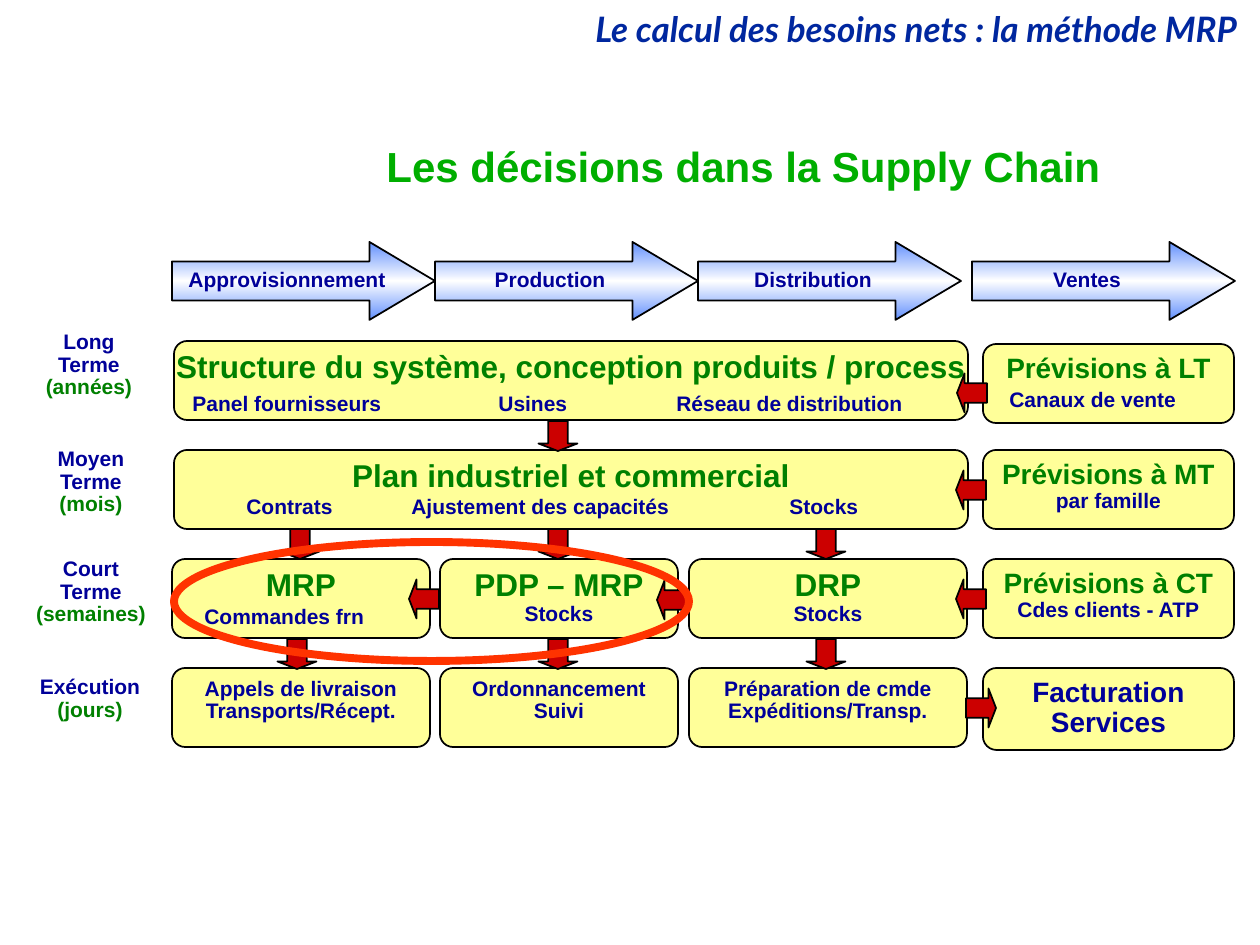
from collections import namedtuple
from copy import deepcopy
from dataclasses import dataclass

from pptx import Presentation
from pptx import util as u
from pptx.dml.color import RGBColor
from pptx.enum import shapes, text
from pptx.oxml.ns import qn

Box = namedtuple("Box", "x y w h")
Run = namedtuple("Run", "words size color")


@dataclass(frozen=True)
class Theme:
    """Colours, type sizes and fonts of the slide."""
    navy: str = "000099"
    green: str = "008000"
    bright_green: str = "00AE00"
    header_blue: str = "00279F"
    sky: str = "618FFD"
    white: str = "FFFFFF"
    cream: str = "FFFF99"
    red: str = "CC0000"
    orange: str = "FF3300"
    black: str = "000000"
    body: int = 12
    forecast: int = 16
    heading: int = 18
    header: int = 20
    title: int = 24
    font: str = "Arial"
    header_font: str = "Lato"


T = Theme()
SHAPE = shapes.MSO_SHAPE
ALIGN = text.PP_ALIGN


def px(length):
    """Turn pixels into EMU."""
    return u.Emu(round(length * 914400 / 126))


def rgb(color):
    """Turn a hex string into a colour."""
    return RGBColor.from_string(color)


def note(words):
    """Return a run in body size and navy."""
    return Run(words, T.body, T.navy)


def write(shape, paragraphs, align=ALIGN.CENTER, font=T.font, italic=False):
    """Write paragraphs of runs, with a line break between runs."""
    frame = shape.text_frame
    for index, runs in enumerate(paragraphs):
        paragraph = frame.add_paragraph() if index else frame.paragraphs[0]
        paragraph.alignment = align
        paragraph.line_spacing = 0.9
        previous = None
        for words, size, color in runs:
            if previous is not None:
                paragraph.add_line_break()
                line_break = paragraph._p.findall(qn("a:br"))[-1]
                line_break.append(deepcopy(previous._r.rPr))
            run = paragraph.add_run()
            run.text = words
            run.font.name = font
            run.font.size = u.Pt(size)
            run.font.bold = True
            run.font.italic = italic
            run.font.color.rgb = rgb(color)
            previous = run


def add_outline(slide, kind, box, fill=None, line=T.black, weight=1):
    """Add a preset shape with a flat fill or none."""
    shape = slide.shapes.add_shape(kind, *map(px, box))
    shape.shadow.inherit = False
    shape.line.color.rgb = rgb(line)
    shape.line.width = u.Pt(weight)
    if fill:
        shape.fill.solid()
        shape.fill.fore_color.rgb = rgb(fill)
    else:
        shape.fill.background()
    return shape


def add_label(slide, box, paragraphs, align=ALIGN.LEFT):
    """Add a text box that fits its unwrapped text."""
    label = slide.shapes.add_textbox(*map(px, box))
    label.text_frame.word_wrap = False
    label.text_frame.auto_size = text.MSO_AUTO_SIZE.SHAPE_TO_FIT_TEXT
    write(label, paragraphs, align)


def add_heading(slide, box, run, font=T.font, italic=False):
    """Add a right-aligned heading line."""
    heading = slide.shapes.add_textbox(*map(px, box))
    heading.text_frame.word_wrap = True
    heading.text_frame.vertical_anchor = text.MSO_ANCHOR.MIDDLE
    write(heading, [[run]], ALIGN.RIGHT, font, italic)


def add_process_band(slide, box, steps):
    """Add the gradient arrows of the chain, each at its offset in the band."""
    for offset, name in steps:
        step = add_outline(slide, SHAPE.RIGHT_ARROW,
                           Box(box.x + offset, box.y, 263, box.h), T.sky)
        step.adjustments[0], step.adjustments[1] = 0.5, 0.84
        step.fill.gradient()
        step.fill.gradient_angle = 90
        stops = step._element.spPr.find(".//" + qn("a:gsLst"))
        stops.append(deepcopy(stops[0]))
        for stop, color, place in zip(step.fill.gradient_stops,
                                      (T.sky, T.white, T.sky), (0, 0.5, 1)):
            stop.color.rgb = rgb(color)
            stop.position = place
        step.text_frame.word_wrap = False
        step.text_frame.vertical_anchor = text.MSO_ANCHOR.MIDDLE
        write(step, [[note(name)]])


def add_horizon(slide, box, lines):
    """Add a planning horizon, its last line in green."""
    colors = [T.navy] * (len(lines) - 1) + [T.green]
    add_label(slide, box, [[Run(line, T.body, color)]
                           for line, color in zip(lines, colors)], ALIGN.CENTER)


def add_decision_row(slide, box, decisions):
    """Add the decision boxes of one horizon, placed from the row's corner."""
    for (dx, dy, width, extra), paragraphs, wrap in decisions:
        decision = add_outline(slide, SHAPE.ROUNDED_RECTANGLE,
                               Box(box.x + dx, box.y + dy, width, box.h + extra), T.cream)
        decision.text_frame.word_wrap = wrap
        decision.text_frame.vertical_anchor = text.MSO_ANCHOR.TOP
        write(decision, paragraphs)


def add_details(slide, box, details):
    """Add single-line details along a row."""
    for dx, dy, width, words in details:
        add_label(slide, Box(box.x + dx, box.y + dy, width, 39), [[note(words)]])


def add_flows(slide, box, flows):
    """Add red block arrows by centre and rotation."""
    for cx, cy, turn in flows:
        flow = add_outline(slide, SHAPE.DOWN_ARROW,
                           Box(box.x + cx - 19.5, box.y + cy - 15, 39, 30), T.red)
        flow.adjustments[0], flow.adjustments[1] = 0.5, 0.25
        flow.rotation = turn


def main():
    """Build and save the slide."""
    deck = Presentation()
    deck.slide_width, deck.slide_height = px(1260), px(945)
    slide = deck.slides.add_slide(deck.slide_layouts[6])

    add_heading(slide, Box(0, 6, 1250, 50), Run(
        "Le calcul des besoins nets : la méthode MRP", T.header, T.header_blue),
        T.header_font, True)
    add_heading(slide, Box(165, 145, 948, 48), Run(
        "Les décisions dans la Supply Chain", T.title, T.bright_green))
    add_process_band(slide, Box(172, 242, 1064, 78), [
        (0, "Approvisionnement"), (263, "Production"),
        (526, "Distribution"), (800, "Ventes")])

    supply, plant, network, sales = (0, 0, 258, 0), (268, 0, 238, 0), (517, 0, 278, 0), (811, 0, 251, 0)
    whole = (2, 0, 794, 0)
    heading = lambda words: Run(words, T.heading, T.green)
    forecast = lambda words: Run(words, T.forecast, T.green)
    billing = lambda words: Run(words, T.forecast, T.navy)
    decisions = [
        [(whole, [[heading("Structure du système, conception produits / process")]], False),
         ((811, 3, 251, 0), [[forecast("Prévisions à LT")]], True)],
        [(whole, [[heading("Plan industriel et commercial")]], False),
         (sales, [[forecast("Prévisions à MT"), note("par famille")]], True)],
        [(supply, [[heading("MRP")]], True),
         (plant, [[heading("PDP – MRP"), note("Stocks")]], True),
         (network, [[heading("DRP"), note("Stocks")]], True),
         (sales, [[forecast("Prévisions à CT"), note("Cdes clients - ATP")]], True)],
        [(supply, [[note("Appels de livraison"), note("Transports/Récept.")]], True),
         (plant, [[note("Ordonnancement"), note("Suivi")]], True),
         (network, [[note("Préparation de cmde"), note("Expéditions/Transp.")]], True),
         ((811, 0, 251, 3), [[billing("Facturation")], [billing("Services")]], True)]]
    horizons = [(26, -16, 126, ["Long", "Terme", "(années)"]),
                (40, -8, 102, ["Moyen", "Terme", "(mois)"]),
                (15, -7, 152, ["Court", "Terme", "(semaines)"]),
                (19, 2, 142, ["Exécution", "(jours)"])]
    details = [
        [(8, 46, 246, "Panel fournisseurs"), (314, 46, 106, "Usines"),
         (492, 46, 289, "Réseau de distribution"), (825, 42, 219, "Canaux de vente")],
        [(62, 40, 126, "Contrats"), (227, 40, 325, "Ajustement des capacités"),
         (605, 40, 106, "Stocks")],
        [(20, 41, 212, "Commandes frn")], []]
    flows = [[(386, 95, 0), (800, 52, 90)],
             [(128, 94, 0), (386, 94, 0), (654, 94, 0), (799, 40, 90)],
             [(125, 95, 0), (386, 95, 0), (654, 95, 0),
              (252, 40, 90), (500, 41, 90), (799, 40, 90)],
             [(809, 40, 270)]]
    rows = [Box(172, 341 + 109 * index, 1062, 79) for index in range(4)]
    for row, row_decisions, (left, rise, width, lines) in zip(rows, decisions, horizons):
        add_decision_row(slide, row, row_decisions)
        add_horizon(slide, Box(left, row.y + rise, width, 22 * len(lines) + 26), lines)
    for row, row_details, row_flows in zip(rows, details, flows):
        add_details(slide, row, row_details)
        add_flows(slide, row, row_flows)
    add_outline(slide, SHAPE.OVAL, Box(174, 542, 515, 119), line=T.orange, weight=4.5)
    deck.save("out.pptx")


if __name__ == "__main__":
    main()
